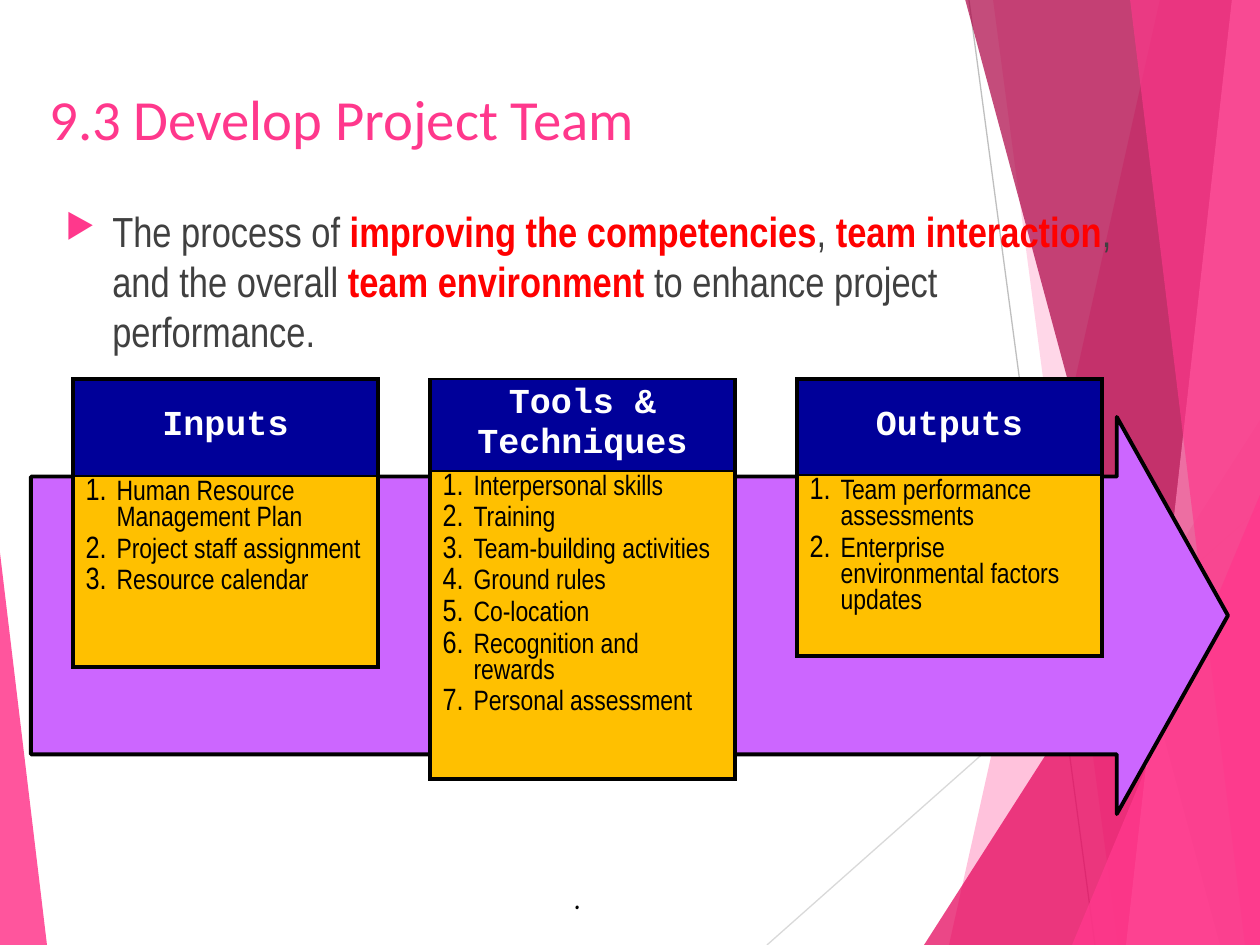
from dataclasses import dataclass
from lxml import etree
from pptx import Presentation
from pptx.dml.color import RGBColor
from pptx.enum.shapes import MSO_CONNECTOR, MSO_SHAPE
from pptx.enum.text import MSO_ANCHOR, PP_ALIGN
from pptx.oxml.ns import qn
from pptx.util import Pt

LINE = MSO_CONNECTOR.STRAIGHT
ARROW = MSO_SHAPE.RIGHT_ARROW
WEDGE = MSO_SHAPE.ISOSCELES_TRIANGLE
TOP, MIDDLE = MSO_ANCHOR.TOP, MSO_ANCHOR.MIDDLE
LEFT, CENTER = PP_ALIGN.LEFT, PP_ALIGN.CENTER
SCALE = 914400 / 126
WIDE, HIGH = 1260, 945


@dataclass(frozen=True)
class Theme:
    pink: str = "FF388C"
    rose: str = "E40059"
    wine: str = "AB0043"
    blush: str = "FF88BA"
    gray: str = "BFBFBF"
    pale: str = "D9D9D9"
    text: str = "404040"
    red: str = "FF0000"
    black: str = "000000"
    white: str = "FFFFFF"
    navy: str = "000099"
    gold: str = "FFC000"
    violet: str = "CC66FF"
    title: tuple = ("Calibri", 32.4)
    body: tuple = ("Arial Narrow", 24)
    head: tuple = ("Courier New", 20)
    item: tuple = ("Arial Narrow", 16)
    mark: tuple = ("Comic Neue", 24)
    thick: float = 2.25
    thin: float = 1
    hair: float = 0.75


T = Theme()


def px(*nums):
    return [round(n * SCALE) for n in nums]


def rgb(code):
    return RGBColor.from_string(code)


def add(par, text, face, color, bold=False):
    run = par.add_run()
    run.text = text
    run.font.name, size = face
    run.font.size = Pt(size)
    run.font.bold = bold
    run.font.color.rgb = rgb(color)


def node(parent, tag, **attrs):
    return etree.SubElement(parent, qn(tag), attrs)


def hang(par, indent):
    props = par._p.get_or_add_pPr()
    (step,) = px(indent)
    props.set("marL", str(step))
    props.set("indent", str(-step))
    return props


def paint(shape, color, alpha=100):
    shape.shadow.inherit = False
    shape.fill.solid()
    shape.fill.fore_color.rgb = rgb(color)
    shape.line.fill.background()
    if alpha < 100:
        tint = shape.fill._xPr.find(qn("a:solidFill"))[0]
        node(tint, "a:alpha", val=str(alpha * 1000))


def rule(slide, ends, color):
    line = slide.shapes.add_connector(LINE, *px(*ends))
    line.line.color.rgb = rgb(color)
    line.line.width = Pt(T.hair)
    node(line._element.spPr, "a:effectLst")


def band(slide, box, top, base, color, alpha):
    x, y, w, h = box
    form = slide.shapes.build_freeform(x + top, y - 1, SCALE)
    form.add_line_segments(
        [(x + w, y - 1), (x + w, y + h), (x + base, y + h)], close=True)
    paint(form.convert_to_shape(), color, alpha)


def wedge(slide, box, left, top, width, adj, color, alpha):
    x, y, _, h = box
    shape = slide.shapes.add_shape(
        WEDGE, *px(x + left, y + top, width, h - top))
    shape.adjustments[0] = adj
    paint(shape, color, alpha)


def backdrop(slide, box):
    x, y, w, h = box
    rule(slide, (x + 969, y, x + 1095, y + h), T.gray)
    rule(slide, (x + w, y + 508, x + 767, y + h), T.pale)
    band(slide, box, 1160, 949, T.pink, 30)
    band(slide, box, 993, 1118, T.pink, 20)
    wedge(slide, box, 924, 420, 336, 1, T.rose, 72)
    band(slide, box, 965, 1220, T.wine, 70)
    band(slide, box, 1232, 1126, T.blush, 70)
    band(slide, box, 1130, 1245, T.pink, 65)
    wedge(slide, box, 1072, 495, 188, 1, T.pink, 80)
    wedge(slide, box, 0, 553, 47, 0, T.pink, 85)


def arrow(slide, box):
    shape = slide.shapes.add_shape(ARROW, *px(*box))
    shape.adjustments[0] = 0.7
    shape.adjustments[1] = 0.28
    paint(shape, T.violet)
    shape.line.color.rgb = rgb(T.black)
    shape.line.width = Pt(T.thick)


def label(slide, box, runs, face, align=LEFT):
    frame = slide.shapes.add_textbox(*px(*box)).text_frame
    frame.word_wrap = True
    frame.vertical_anchor = TOP
    par = frame.paragraphs[0]
    par.alignment = align
    for text, color, bold in runs:
        add(par, text, face, color, bold)
    return par


def body(slide, box, runs):
    par = label(slide, box, runs, T.body)
    par.space_before = Pt(10)
    props = hang(par, 47)
    node(node(props, "a:buClr"), "a:srgbClr", val=T.pink)
    node(props, "a:buSzPct", val="80000")
    node(props, "a:buChar", char="▶")


def dress(cell, color, top, base):
    props = cell._tc.get_or_add_tcPr()
    sides = {"L": T.thick, "R": T.thick, "T": top, "B": base}
    for side, width in sides.items():
        edge = node(props, f"a:ln{side}", w=str(Pt(width)))
        node(node(edge, "a:solidFill"), "a:srgbClr", val=T.black)
    cell.fill.solid()
    cell.fill.fore_color.rgb = rgb(color)


def card(slide, box, split, top, name, items):
    h = box[3]
    table = slide.shapes.add_table(2, 1, *px(*box)).table
    table.first_row = table.horz_banding = False
    for row, size in zip(table.rows, px(split, h - split)):
        row.height = size
    head, cell = table.cell(0, 0), table.cell(1, 0)
    dress(head, T.navy, top, T.thin)
    dress(cell, T.gold, T.thin, T.thick)
    head.vertical_anchor = MIDDLE
    head.margin_top, head.margin_bottom = px(2, 4)
    par = head.text_frame.paragraphs[0]
    par.alignment = CENTER
    add(par, name, T.head, T.white, True)
    frame = cell.text_frame
    cell.margin_top, cell.margin_bottom = px(4, 4)
    for i, item in enumerate(items):
        par = frame.add_paragraph() if i else frame.paragraphs[0]
        par.line_spacing = 1.0
        par.space_before = Pt(3)
        props = hang(par, 31)
        node(props, "a:buSzPct", val="110000")
        node(props, "a:buAutoNum", type="arabicPeriod")
        add(par, item, T.item, T.black)


def flow(slide, box):
    x, y, w, h = box
    arrow(slide, (x, y + 38, w, h - 38))
    cards = [
        (288, 97, T.thick, "Inputs", [
            "Human Resource Management Plan", "Project staff assignment",
            "Resource calendar"]),
        (349, 92, T.thin, "Tools & Techniques", [
            "Interpersonal skills", "Training", "Team-building activities",
            "Ground rules", "Co-location", "Recognition and rewards",
            "Personal assessment"]),
        (246, 96, T.thick, "Outputs", [
            "Team performance assessments",
            "Enterprise environmental factors updates"]),
    ]
    for i, (tall, *rest) in enumerate(cards):
        card(slide, (x + 42 + 362 * i - 5 * (i == 1), y, 305, tall), *rest)


def main():
    deck = Presentation()
    deck.slide_width, deck.slide_height = px(WIDE, HIGH)
    slide = deck.slides.add_slide(deck.slide_layouts[6])
    backdrop(slide, (0, 0, WIDE, HIGH))
    label(slide, (37, 78, 1050, 53),
          [("9.3 Develop Project Team", T.pink, False)], T.title)
    body(slide, (53, 199, 1081, 189), [
        ("The process of ", T.text, False),
        ("improving the competencies", T.red, True),
        (", ", T.text, False),
        ("team interaction", T.red, True),
        (", and the overall ", T.text, False),
        ("team environment ", T.red, True),
        ("to enhance project performance.", T.text, False)])
    flow(slide, (31, 379, 1197, 435))
    label(slide, (63, 861, 1029, 64), [(".", T.black, False)], T.mark, CENTER)
    deck.save("out.pptx")


if __name__ == "__main__":
    main()
